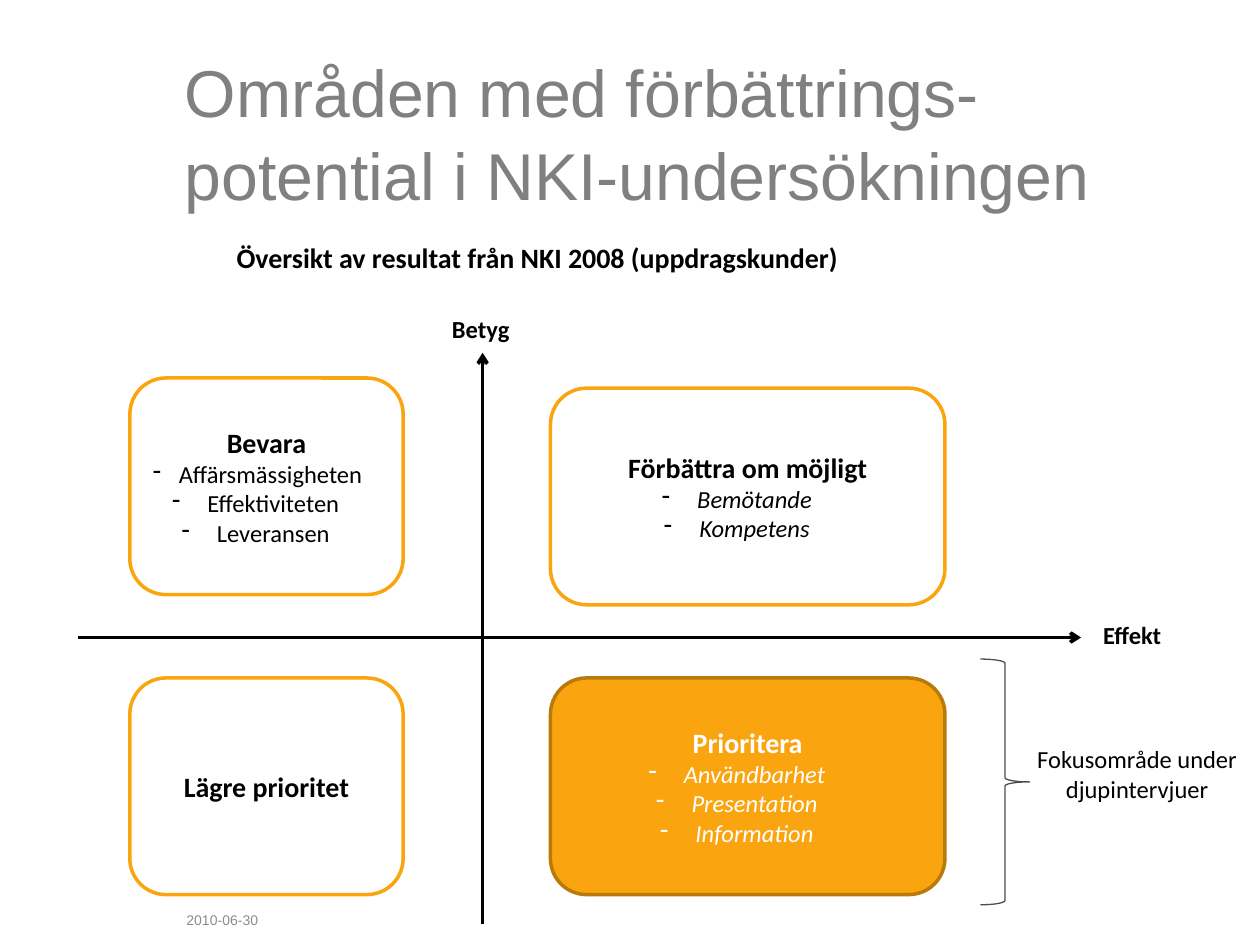
from pptx import Presentation
from pptx.dml.color import RGBColor
from pptx.enum import shapes, text
from pptx.oxml.ns import qn
from pptx.util import Pt
from lxml import etree

BLACK = RGBColor(0, 0, 0)
WHITE = RGBColor(255, 255, 255)
ORANGE = RGBColor(0xFA, 0xA5, 0x0F)
DARK_ORANGE = RGBColor(0xB9, 0x7A, 0x0B)
TITLE_GRAY = RGBColor(0x80, 0x80, 0x80)
DATE_GRAY = RGBColor(0x8C, 0x8C, 0x8C)
BRACE_GRAY = RGBColor(0x4D, 0x4D, 0x4D)

TITLE = "Områden med förbättrings-potential i NKI-undersökningen"
LEFT_COLUMN = (74.2, 156.2)
RIGHT_COLUMN = (314.6, 225.4)
QUADRANT_HEIGHT = 123.8
LOWER_TOP = 387.4
QUADRANTS = [
    (LEFT_COLUMN, 216, "Bevara",
     ["Affärsmässigheten", " Effektiviteten", " Leveransen"],
     False, WHITE, ORANGE, BLACK),
    (LEFT_COLUMN, LOWER_TOP, "Lägre prioritet", [],
     False, WHITE, ORANGE, BLACK),
    (RIGHT_COLUMN, 221.8, "Förbättra om möjligt",
     [" Bemötande", " Kompetens"],
     True, WHITE, ORANGE, BLACK),
    (RIGHT_COLUMN, LOWER_TOP, "Prioritera",
     [" Användbarhet", " Presentation", " Information"],
     True, ORANGE, DARK_ORANGE, WHITE),
]
AXES = [(44.6, 364.3, 617.8, 364.3), (275.8, 527.8, 275.8, 201.6)]
LABELS = [
    ("Betyg", (223.9, 175.7, 101.5, 24.5), dict(bold=True)),
    ("Effekt", (596.2, 350.6, 101.5, 24.5), dict(bold=True)),
    ("Fokusområde under djupintervjuer", (579.6, 421.9, 140.4, 41), {}),
    ("Översikt av resultat från NKI 2008 (uppdragskunder)",
     (104.4, 133.9, 405.4, 26.6), dict(size=16, bold=True)),
]


def write(paragraph, words, size=14, font="Calibri", color=BLACK, bold=False,
          italic=False, align=text.PP_ALIGN.CENTER, bullet=None):
    paragraph.alignment = align
    if bullet:
        properties = paragraph._p.get_or_add_pPr()
        etree.SubElement(properties, qn("a:buChar")).set("char", bullet)
    run = paragraph.add_run()
    run.text = words
    run.font.size = Pt(size)
    run.font.name = font
    run.font.color.rgb = color
    run.font.bold = bold
    run.font.italic = italic


def add_text(slide, words, place, anchor=text.MSO_ANCHOR.TOP, spacing=None, **style):
    frame = slide.shapes.add_textbox(*map(Pt, place)).text_frame
    frame.word_wrap = True
    frame.vertical_anchor = anchor
    if spacing:
        frame.paragraphs[0].line_spacing = spacing
    write(frame.paragraphs[0], words, **style)


def add_axis(slide, ends):
    axis = slide.shapes.add_connector(shapes.MSO_CONNECTOR.STRAIGHT, *map(Pt, ends))
    axis.line.color.rgb = BLACK
    axis.line.width = Pt(2)
    line = axis.line._get_or_add_ln()
    etree.SubElement(line, qn("a:tailEnd")).set("type", "arrow")
    etree.SubElement(axis._element.spPr, qn("a:effectLst"))


def add_quadrant(slide, column, top, heading, items, italic, fill, outline, ink):
    left, width = column
    quadrant = slide.shapes.add_shape(
        shapes.MSO_SHAPE.ROUNDED_RECTANGLE,
        Pt(left), Pt(top), Pt(width), Pt(QUADRANT_HEIGHT))
    quadrant.shadow.inherit = False
    quadrant.fill.solid()
    quadrant.fill.fore_color.rgb = fill
    quadrant.line.color.rgb = outline
    quadrant.line.width = Pt(2)
    frame = quadrant.text_frame
    frame.word_wrap = True
    frame.vertical_anchor = text.MSO_ANCHOR.MIDDLE
    write(frame.paragraphs[0], heading, size=16, color=ink, bold=True)
    for item in items:
        write(frame.add_paragraph(), item, color=ink, italic=italic, bullet="-")


def add_focus_brace(slide):
    brace = slide.shapes.add_shape(
        shapes.MSO_SHAPE.RIGHT_BRACE, Pt(560.2), Pt(376.6), Pt(28.1), Pt(140.4))
    brace.shadow.inherit = False
    brace.fill.background()
    brace.line.color.rgb = BRACE_GRAY
    brace.line.width = Pt(0.75)


def main():
    deck = Presentation()
    deck.slide_width, deck.slide_height = Pt(720), Pt(540)
    slide = deck.slides.add_slide(deck.slide_layouts[6])
    left = text.PP_ALIGN.LEFT
    middle = text.MSO_ANCHOR.MIDDLE
    add_text(slide, TITLE, (98.6, 29.5, 585.4, 90), anchor=middle, spacing=1.05,
             size=37.8, font="Arial", color=TITLE_GRAY, align=left)
    for ends in AXES:
        add_axis(slide, ends)
    for quadrant in QUADRANTS:
        add_quadrant(slide, *quadrant)
    for words, place, style in LABELS:
        add_text(slide, words, place, **style)
    add_focus_brace(slide)
    add_text(slide, "2010-06-30", (99.4, 511.2, 104.4, 28.8), anchor=middle,
             size=8, font="Arial", color=DATE_GRAY, align=left)
    deck.save("out.pptx")


if __name__ == "__main__":
    main()
